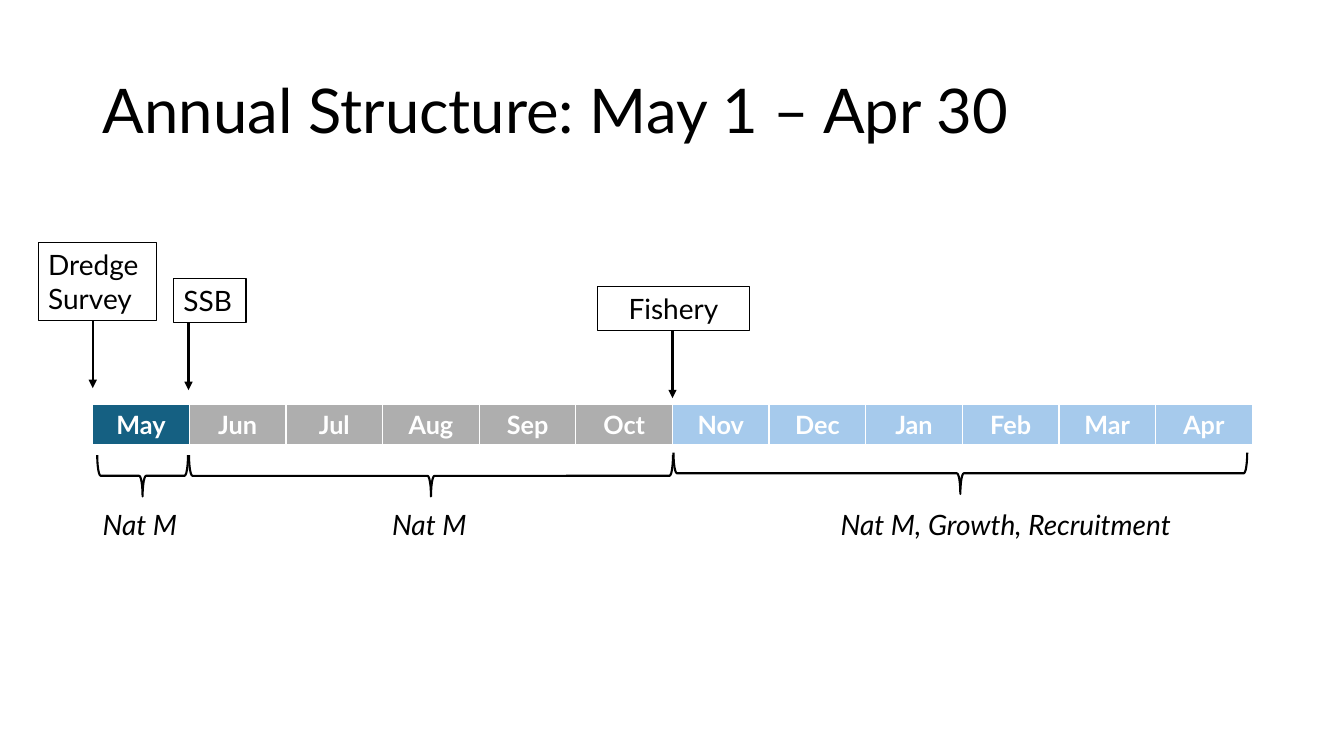
import pptx
import pptx.dml.color
import pptx.enum.shapes
import pptx.enum.text
import pptx.oxml
import pptx.oxml.ns
import pptx.util
from pptx.util import Inches

COLORS = {"ink": "000000", "white": "FFFFFF", "survey": "156082",
          "summer": "AEAEAE", "fishing": "A6CAEC"}
ALIGN = pptx.enum.text.PP_ALIGN
ANCHOR = pptx.enum.text.MSO_ANCHOR
SHAPE = pptx.enum.shapes.MSO_SHAPE


def color(name):
    return pptx.dml.color.RGBColor.from_string(COLORS[name])


def write(frame, text, size, ink="ink", align=ALIGN.LEFT, **formats):
    para = frame.paragraphs[0]
    para.alignment = align
    span = para.add_run()
    span.text = text
    formats.update(name="Lato", size=pptx.util.Pt(size))
    for key, value in formats.items():
        setattr(span.font, key, value)
    span.font.color.rgb = color(ink)


deck = pptx.Presentation()
deck.slide_width, deck.slide_height = Inches(13.33), Inches(7.5)
page = deck.slides.add_slide(deck.slide_layouts[5])

title = page.shapes.title
title.left, title.top, title.width, title.height = map(Inches, (0.92, 0.4, 11.5, 1.45))
title.text_frame.vertical_anchor = ANCHOR.MIDDLE
write(title.text_frame, "Annual Structure: May 1 – Apr 30", 44)
title.text_frame.paragraphs[0].line_spacing = 0.9

months = [("May", "survey")]
months += [(month, "summer") for month in ("Jun", "Jul", "Aug", "Sep", "Oct")]
months += [(month, "fishing") for month in ("Nov", "Dec", "Jan", "Feb", "Mar", "Apr")]
calendar = page.shapes.add_table(
    1, len(months), Inches(0.92), Inches(4.01), Inches(11.5), Inches(0.41)).table
for column, (month, season) in enumerate(months):
    cell = calendar.cell(0, column)
    write(cell.text_frame, month, 18, "white", ALIGN.CENTER, bold=True)
    cell.fill.solid()
    cell.fill.fore_color.rgb = color(season)
    borders = (("lnL", 1), ("lnR", 1), ("lnT", 1), ("lnB", 3))
    for position, (side, points) in enumerate(borders):
        border = pptx.oxml.parse_xml(
            f'<a:{side} {pptx.oxml.ns.nsdecls("a")} w="{pptx.util.Pt(points)}">'
            f'<a:solidFill><a:srgbClr val="{COLORS["white"]}"/></a:solidFill></a:{side}>')
        cell._tc.get_or_add_tcPr().insert(position, border)

events = [
    ("Dredge Survey", 0.38, 2.41, 1.17, 0.77, ALIGN.LEFT, 0.92),
    ("SSB", 1.72, 2.76, 0.72, 0.44, ALIGN.LEFT, 1.87),
    ("Fishery", 5.93, 2.84, 1.5, 0.44, ALIGN.CENTER, 6.67),
]
for text, left, top, width, height, align, arrow_x in events:
    box = page.shapes.add_shape(SHAPE.RECTANGLE, *map(Inches, (left, top, width, height)))
    box.shadow.inherit = False
    box.fill.background()
    box.line.color.rgb = color("ink")
    box.line.width = pptx.util.Pt(0.75)
    box.text_frame.word_wrap = True
    box.text_frame.vertical_anchor = ANCHOR.TOP
    write(box.text_frame, text, 20, align=align)
    bottom = top + height
    arrow = page.shapes.add_connector(
        pptx.enum.shapes.MSO_CONNECTOR.STRAIGHT,
        *map(Inches, (arrow_x, bottom, arrow_x, bottom + 0.67)))
    arrow.line.color.rgb = color("ink")
    arrow.line.width = pptx.util.Pt(1.5)
    head = pptx.oxml.parse_xml(f'<a:tailEnd {pptx.oxml.ns.nsdecls("a")} type="triangle"/>')
    arrow.line._get_or_add_ln().append(head)
    effects = pptx.oxml.parse_xml(f'<a:effectLst {pptx.oxml.ns.nsdecls("a")}/>')
    arrow._element.spPr.append(effects)

periods = [
    ("Nat M", 0.92, 1.3, 1.21, 4.27, 0.9),
    ("Nat M", 3.79, 1.3, 4.07, 2.32, 4.8),
    ("Nat M, Growth, Recruitment", 8.24, 3.96, 9.32, 1.85, 5.69),
]
for text, left, width, brace_left, brace_top, span_length in periods:
    brace = page.shapes.add_shape(
        SHAPE.LEFT_BRACE, *map(Inches, (brace_left, brace_top, 0.41, span_length)))
    brace.rotation = 270
    brace.shadow.inherit = False
    brace.fill.background()
    brace.line.color.rgb = color("ink")
    brace.line.width = pptx.util.Pt(1.5)
    label = page.shapes.add_textbox(*map(Inches, (left, 4.99, width, 0.44)))
    label.text_frame.word_wrap = True
    write(label.text_frame, text, 20, italic=True)

deck.save("out.pptx")
